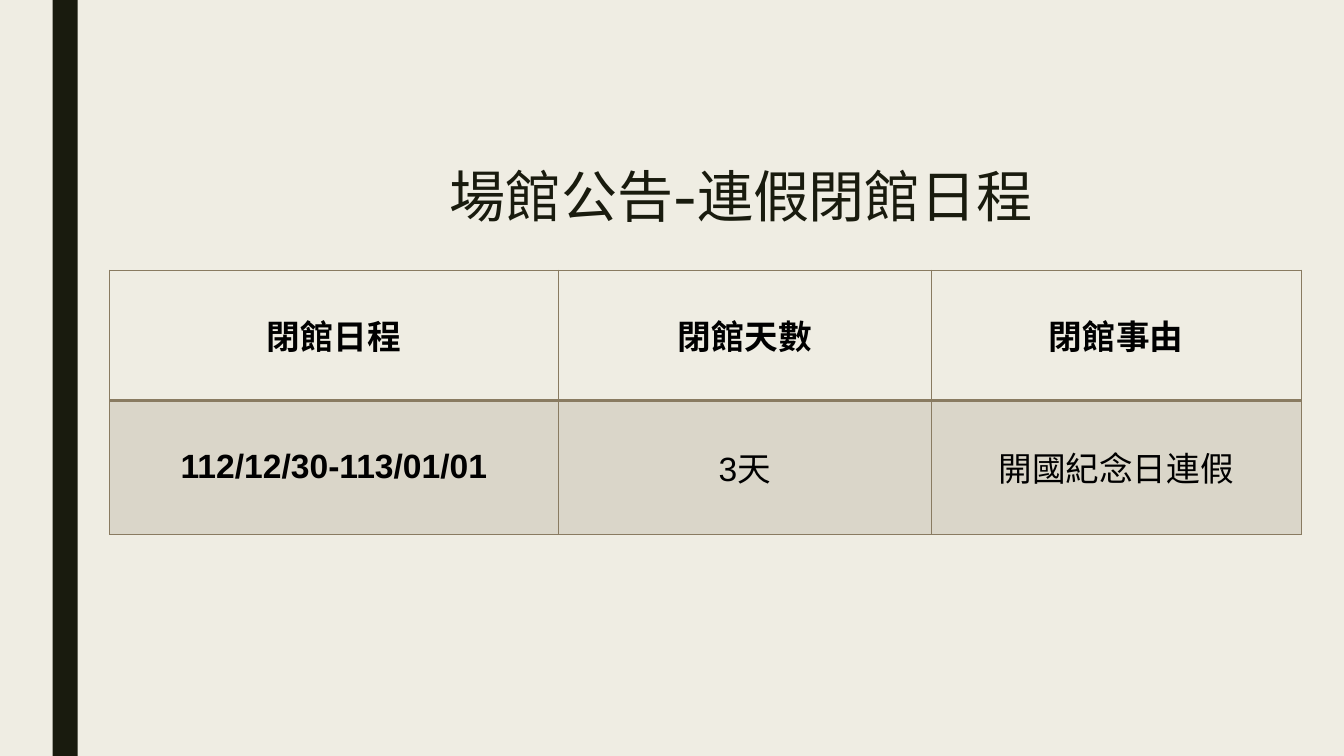
"""Build a slide announcing the holiday closing dates of a venue."""
import pptx
import pptx.dml.color
import pptx.enum.shapes
import pptx.enum.text
import pptx.oxml
import pptx.oxml.ns
import pptx.util

HUES = {"paper": "EFEDE3", "ink": "191B0E", "line": "897B61", "black": "000000"}
COLS, ROWS = 160, 90
ROSTER = [
    ["閉館日程", "閉館天數", "閉館事由"],
    ["112/12/30-113/01/01", "3天", "開國紀念日連假"],
]


class Board:
    def __init__(self, deck):
        self.wide = deck.slide_width / COLS
        self.high = deck.slide_height / ROWS
        self.slide = deck.slides.add_slide(deck.slide_layouts[6])
        self.paint(self.slide.background.fill, "paper")

    def box(self, x, y, w, h):
        return [round(n) for n in (x * self.wide, y * self.high, w * self.wide, h * self.high)]

    def paint(self, fill, hue):
        fill.solid()
        fill.fore_color.rgb = pptx.dml.color.RGBColor.from_string(HUES[hue])

    def style(self, font, face, size, hue, bold=False):
        font.name, font.size, font.bold = face, pptx.util.Pt(size), bold
        self.paint(font.fill, hue)

    def bar(self, *area):
        shape = self.slide.shapes.add_shape(
            pptx.enum.shapes.MSO_SHAPE.RECTANGLE, *self.box(*area))
        shape.shadow.inherit = False
        self.paint(shape.fill, "ink")
        shape.line.fill.background()

    def title(self, words, *area):
        frame = self.slide.shapes.add_textbox(*self.box(*area)).text_frame
        frame.word_wrap = True
        frame.text = words
        line = frame.paragraphs[0]
        line.line_spacing = 0.89
        self.style(line.font, "Cabin", 40, "ink")

    def edge(self, cell, base):
        props = cell._tc.get_or_add_tcPr()
        for spot, side in enumerate("LRTB"):
            width = pptx.util.Pt(base if side == "B" else 1)
            props.insert(spot, pptx.oxml.parse_xml(
                f'<a:ln{side} {pptx.oxml.ns.nsdecls("a")} w="{width}"><a:solidFill>'
                f'<a:srgbClr val="{HUES["line"]}"/></a:solidFill></a:ln{side}>'))

    def tint(self, cell, share):
        self.paint(cell.fill, "line")
        color = cell._tc.tcPr.find(".//" + pptx.oxml.ns.qn("a:srgbClr"))
        color.append(pptx.oxml.parse_xml(
            f'<a:alpha {pptx.oxml.ns.nsdecls("a")} val="{share * 1000}"/>'))

    def table(self, data, x, y, spans, depths):
        grid = self.slide.shapes.add_table(
            len(data), len(spans), *self.box(x, y, sum(spans), sum(depths))).table
        grid.first_row = grid.horz_banding = False
        for col, span in zip(grid.columns, spans):
            col.width = round(span * self.wide)
        for r, (row, depth) in enumerate(zip(data, depths)):
            grid.rows[r].height = round(depth * self.high)
            for c, words in enumerate(row):
                self.cell(grid.cell(r, c), words, r == 0, r == 0 or c == 0)

    def cell(self, cell, words, head, bold):
        cell.text = words
        cell.vertical_anchor = pptx.enum.text.MSO_ANCHOR.MIDDLE
        cell.margin_left = cell.margin_right = pptx.util.Inches(0.07)
        cell.margin_top = cell.margin_bottom = 0
        line = cell.text_frame.paragraphs[0]
        line.alignment = pptx.enum.text.PP_ALIGN.CENTER
        self.style(line.font, "Arial", 24, "black", bold)
        if head:
            cell.fill.background()
        else:
            self.tint(cell, 20)
        self.edge(cell, 2 if head else 1)


def main():
    deck = pptx.Presentation()
    deck.slide_width = pptx.util.Inches(13.33)
    deck.slide_height = pptx.util.Inches(7.5)
    board = Board(deck)
    board.bar(6.25, 0, 3, ROWS)
    board.title("場館公告-連假閉館日程", 52.33, 19.56, 105, 10)
    board.table(ROSTER, 13.05, 32.16, [53.4, 44.4, 44.05], [15.5, 15.95])
    deck.save("out.pptx")


if __name__ == "__main__":
    main()
